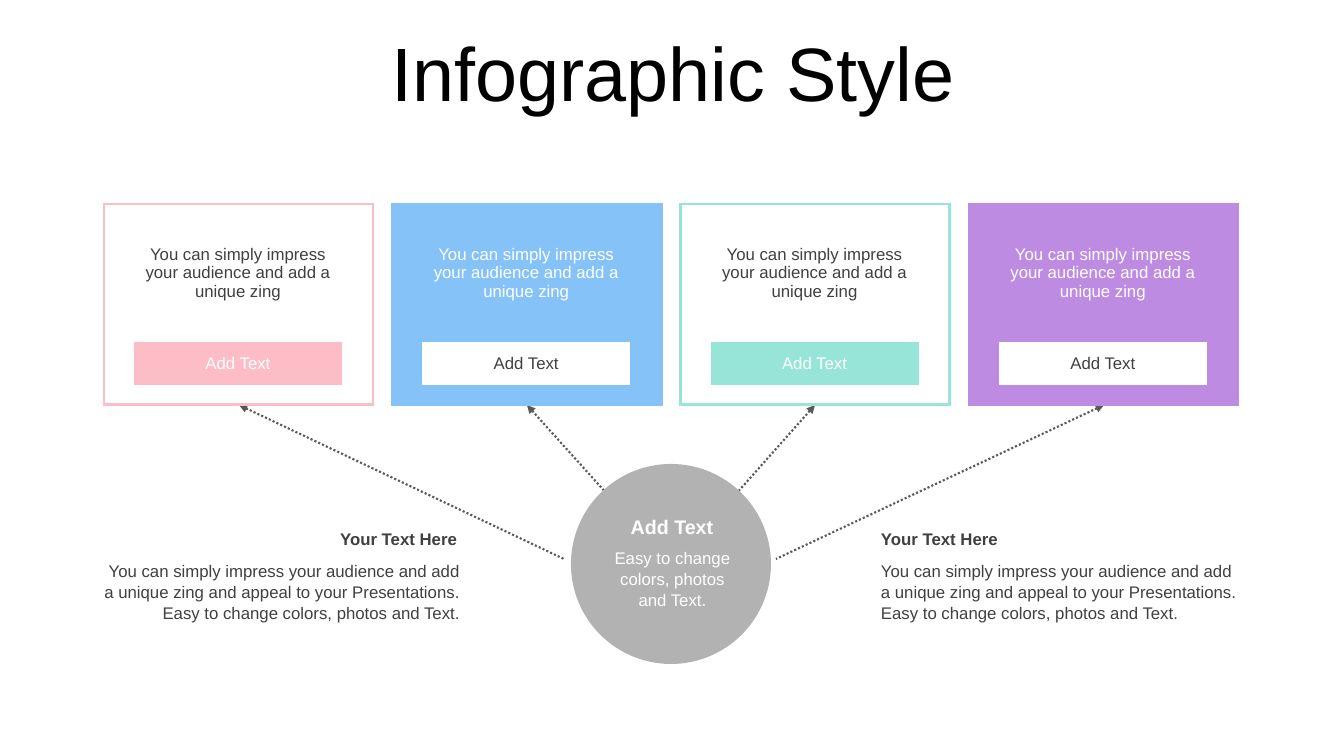
from lxml import etree
from pptx import Presentation
from pptx import util as u
from pptx.dml.color import RGBColor
from pptx.enum import dml, shapes, text
from pptx.oxml.ns import qn

PX = 914400 / 100.8
WHITE, DARK, GREY, LINE = "FFFFFF", "404040", "B2B2B2", "595959"
LEFT, MID, RIGHT = text.PP_ALIGN.LEFT, text.PP_ALIGN.CENTER, text.PP_ALIGN.RIGHT
TOP, MIDDLE = text.MSO_ANCHOR.TOP, text.MSO_ANCHOR.MIDDLE
NO_STYLE = "{2D5ABB26-0587-4C30-8999-92F81FD0307C}"


def px(*nums):
    """Turn pixel lengths into EMU."""
    return [u.Emu(round(n * PX)) for n in nums]


def write(frame, words, hue, align, space=1.0, **form):
    """Fill a text frame with one paragraph; form holds font values."""
    frame.word_wrap = True
    par = frame.paragraphs[0]
    par.alignment, par.line_spacing = align, space
    run = par.add_run()
    run.text = words
    run.font.color.rgb = RGBColor.from_string(hue)
    for key, val in {"name": "Arial", "size": u.Pt(12), **form}.items():
        setattr(run.font, key, val)


deck = Presentation()
deck.slide_width, deck.slide_height = px(1344, 756)
slide = deck.slides.add_slide(deck.slide_layouts[6])
items = slide.shapes

# Arrows from the hub to the cards
for tip, tail in [
    ((527, 405), (672, 566)),
    ((239, 405), (564, 559)),
    ((815, 405), (672, 566)),
    ((1104, 405), (776, 559)),
]:
    arrow = items.add_connector(shapes.MSO_CONNECTOR.STRAIGHT, *px(*tip, *tail))
    arrow.line.color.rgb = RGBColor.from_string(LINE)
    arrow.line.width = u.Pt(1.5)
    arrow.line.dash_style = dml.MSO_LINE.ROUND_DOT
    props = arrow.line._get_or_add_ln()
    etree.SubElement(props, qn("a:headEnd"), type="triangle")
    etree.SubElement(props.getparent(), qn("a:effectLst"))

# Hub
hub = items.add_shape(shapes.MSO_SHAPE.OVAL, *px(571, 464, 200, 200))
hub.shadow.inherit = False
hub.fill.solid()
hub.fill.fore_color.rgb = RGBColor.from_string(GREY)
hub.line.fill.background()

# Title, side notes and hub text
NOTE = ("You can simply impress your audience and add a unique zing and appeal "
        "to your Presentations. Easy to change colors, photos and Text.")
HEAD = "Your Text Here"
BOLD = {"bold": True}
for box, words, hue, align, anchor, space, form in [
    ((35, 31, 1276, 93), "Infographic Style", "000000", MID, MIDDLE, 0.9,
     {"size": u.Pt(54)}),
    ((871, 524, 378, 30), HEAD, DARK, LEFT, TOP, 1.0, BOLD),
    ((871, 555, 381, 72), NOTE, DARK, LEFT, TOP, 1.05, {}),
    ((92, 524, 375, 30), HEAD, DARK, RIGHT, TOP, 1.0, BOLD),
    ((92, 555, 378, 72), NOTE, DARK, RIGHT, TOP, 1.05, {}),
    ((599, 510, 146, 33), "Add Text", WHITE, MID, MIDDLE, 1.0,
     {"size": u.Pt(14), **BOLD}),
    ((600, 536, 145, 85), "Easy to change colors, photos and Text.", WHITE, MID,
     MIDDLE, 1.05, {}),
]:
    frame = items.add_textbox(*px(*box)).text_frame
    frame.vertical_anchor = anchor
    write(frame, words, hue, align, space, **form)

# Cards: an outlined or a filled table with a contrasting button cell
COLS, ROWS = (30, 208, 31), (20, 98, 20, 43, 20)
ZING = "You can simply impress your audience and add a unique zing"
for num, (hue, solid) in enumerate([
    ("FDBDC7", False), ("85C2F8", True), ("96E5D8", False), ("BE8BE2", True),
]):
    back, front = (hue, WHITE) if solid else (WHITE, hue)
    ink, label = (WHITE, DARK) if solid else (DARK, WHITE)
    place = px(104 + 288.3 * num, 204, sum(COLS), sum(ROWS))
    card = items.add_table(len(ROWS), len(COLS), *place).table
    card.first_row = card.horz_banding = False
    card._tbl.tblPr[0].text = NO_STYLE
    for col, wide in zip(card.columns, COLS):
        col.width, = px(wide)
    for row, high in zip(card.rows, ROWS):
        row.height, = px(high)

    words = {(1, 1): (ZING, ink), (3, 1): ("Add Text", label)}
    for r in range(len(ROWS)):
        for c in range(len(COLS)):
            cell = card.cell(r, c)
            cell.margin_top = cell.margin_bottom = 0
            cell.vertical_anchor = MIDDLE
            edges = {"lnL": c == 0, "lnR": c == len(COLS) - 1,
                     "lnT": r == 0, "lnB": r == len(ROWS) - 1}
            for edge, outer in edges.items():
                if outer:
                    side = etree.SubElement(cell._tc.get_or_add_tcPr(),
                                            qn("a:" + edge), w=str(u.Pt(2.25)))
                    paint = etree.SubElement(side, qn("a:solidFill"))
                    etree.SubElement(paint, qn("a:srgbClr"), val=hue)
            cell.fill.solid()
            shade = front if (r, c) == (3, 1) else back
            cell.fill.fore_color.rgb = RGBColor.from_string(shade)
            if (r, c) in words:
                write(cell.text_frame, *words[r, c], MID)
            else:
                par = cell.text_frame.paragraphs[0]._p
                etree.SubElement(par, qn("a:endParaRPr"), sz="800")

deck.save("out.pptx")
